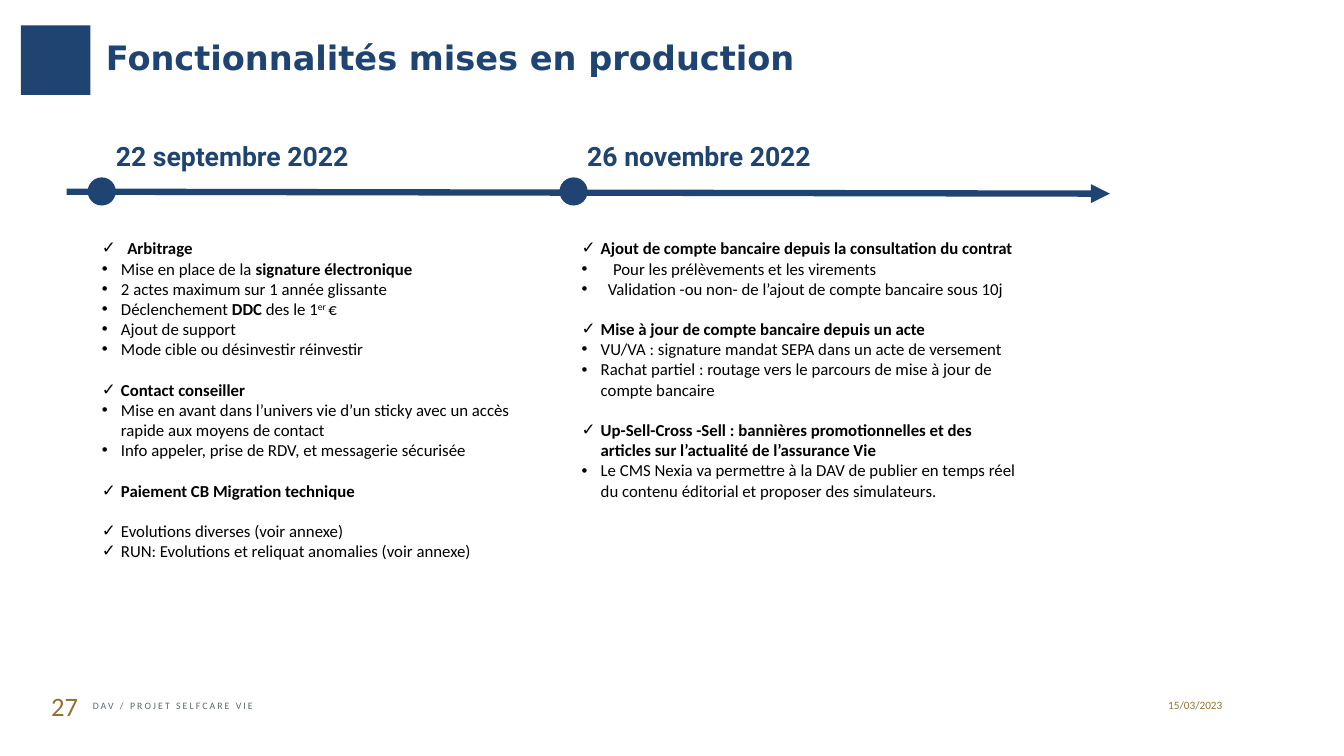
from dataclasses import dataclass

from lxml import etree
from pptx import Presentation
from pptx import util as u
from pptx.dml.color import RGBColor
from pptx.enum import shapes, text
from pptx.oxml import ns

Cm, Pt = u.Cm, u.Pt
Shape, Align, Anchor = shapes.MSO_SHAPE, text.PP_ALIGN, text.MSO_ANCHOR


@dataclass(frozen=True)
class Theme:
    navy: str = "1F4471"
    gold: str = "8F7332"
    slate: str = "5B6971"
    black: str = "000000"
    title_font: str = "DejaVu Sans"
    date_font: str = "Roboto"
    body_font: str = "Calibri"
    title_size: int = 24
    date_size: int = 19
    body_size: int = 12
    small_size: int = 8
    footer_size: int = 7
    block_gap: float = 14.5


THEME = Theme()
CHECK, DOT = "✓", "•"
INDENT = 0.48


@dataclass(frozen=True)
class Item:
    bullet: str
    content: str
    new_block: bool = False
    indent: float = INDENT


MILESTONES = [
    (2.21, 2.67, 2.11, "22 septembre 2022", [
        Item(CHECK, "**Arbitrage**", indent=0.64),
        Item(DOT, "Mise en place de la **signature électronique**"),
        Item(DOT, "2 actes maximum sur 1 année glissante"),
        Item(DOT, "Déclenchement **DDC** des le 1^er ^€"),
        Item(DOT, "Ajout de support"),
        Item(DOT, "Mode cible ou désinvestir réinvestir"),
        Item(CHECK, "**Contact conseiller**", True),
        Item(DOT, "Mise en avant dans l’univers vie d’un sticky avec un accès "
                  "rapide aux moyens de contact"),
        Item(DOT, "Info appeler, prise de RDV, et messagerie sécurisée"),
        Item(CHECK, "**Paiement CB Migration technique**", True),
        Item(CHECK, "Evolutions diverses (voir annexe)", True),
        Item(CHECK, "RUN: Evolutions et reliquat anomalies (voir annexe)"),
    ]),
    (14.1, 14.55, 14.2, "26 novembre 2022", [
        Item(CHECK, "**Ajout de compte bancaire depuis la consultation du contrat**"),
        Item(DOT, "Pour les prélèvements et les virements", indent=0.79),
        Item(DOT, "Validation -ou non- de l’ajout de compte bancaire sous 10j",
             indent=0.66),
        Item(CHECK, "**Mise à jour de compte bancaire depuis un acte**", True),
        Item(DOT, "VU/VA : signature mandat SEPA dans un acte de versement"),
        Item(DOT, "Rachat partiel : routage vers le parcours de mise à jour de "
                  "compte bancaire"),
        Item(CHECK, "**Up-Sell-Cross -Sell : bannières promotionnelles et des "
                    "articles sur l’actualité de l’assurance Vie**", True),
        Item(DOT, "Le CMS Nexia va permettre à la DAV de publier en temps réel "
                  "du contenu éditorial et proposer des simulateurs."),
    ]),
]


def add_run(paragraph, content, font, size, color, bold=False, spacing=0, raised=False):
    run = paragraph.add_run()
    run.text = content
    run.font.name = font
    run.font.size = Pt(size)
    run.font.bold = bold
    run.font.color.rgb = RGBColor.from_string(color)
    properties = run.font._element
    if spacing:
        properties.set("spc", str(int(spacing * 100)))
    if raised:
        properties.set("baseline", "30000")


def add_frame(slide, left, top, width, height, inset=(0, 0), anchor=Anchor.TOP):
    frame = slide.shapes.add_textbox(Cm(left), Cm(top), Cm(width), Cm(height)).text_frame
    frame.word_wrap = True
    frame.vertical_anchor = anchor
    frame.margin_left = frame.margin_right = Cm(inset[0])
    frame.margin_top = frame.margin_bottom = Cm(inset[1])
    return frame


def add_text(slide, content, box, inset=(0, 0), anchor=Anchor.MIDDLE, align=Align.LEFT,
             **run_format):
    paragraph = add_frame(slide, *box, inset=inset, anchor=anchor).paragraphs[0]
    paragraph.alignment = align
    add_run(paragraph, content, **run_format)


def add_solid(slide, preset, left, top, side):
    shape = slide.shapes.add_shape(preset, Cm(left), Cm(top), Cm(side), Cm(side))
    shape.shadow.inherit = False
    shape.fill.solid()
    shape.fill.fore_color.rgb = RGBColor.from_string(THEME.navy)
    shape.line.fill.background()


def add_arrow(slide, start, end):
    arrow = slide.shapes.add_connector(
        shapes.MSO_CONNECTOR.STRAIGHT, *map(Cm, start), *map(Cm, end))
    arrow.line.color.rgb = RGBColor.from_string(THEME.navy)
    arrow.line.width = Pt(4.5)
    etree.SubElement(arrow.line._get_or_add_ln(), ns.qn("a:tailEnd"), type="triangle")
    etree.SubElement(arrow._element.spPr, ns.qn("a:effectLst"))


def set_bullet(paragraph, bullet, indent):
    properties = paragraph._p.get_or_add_pPr()
    properties.set("marL", str(Cm(indent)))
    properties.set("indent", str(-Cm(indent)))
    etree.SubElement(properties, ns.qn("a:buFont"), typeface="Arial")
    etree.SubElement(properties, ns.qn("a:buChar"), char=bullet)


def add_list(slide, items, left):
    frame = add_frame(slide, left, 5.77, 11.94, 9.68, inset=(0.46, 0.23))
    for index, item in enumerate(items):
        paragraph = frame.add_paragraph() if index else frame.paragraphs[0]
        if item.new_block:
            paragraph.space_before = Pt(THEME.block_gap)
        set_bullet(paragraph, item.bullet, item.indent)
        for bold_index, segment in enumerate(item.content.split("**")):
            for raised_index, piece in enumerate(segment.split("^")):
                if piece:
                    add_run(paragraph, piece, THEME.body_font, THEME.body_size,
                            THEME.black, bold=bold_index % 2 == 1,
                            raised=raised_index % 2 == 1)


def add_milestone(slide, dot_left, date_left, list_left, date, items):
    add_solid(slide, Shape.OVAL, dot_left, 4.47, 0.71)
    add_text(slide, date, (date_left, 3.4, 8.18, 1.07), inset=(0.25, 0.13),
             anchor=Anchor.TOP, font=THEME.date_font, size=THEME.date_size,
             color=THEME.navy, bold=True)
    add_list(slide, items, list_left)


def add_footer(slide):
    add_text(slide, "27", (1.04, 17.25, 1.5, 1.02), inset=(0.25, 0.13),
             anchor=Anchor.TOP, font=THEME.body_font, size=THEME.date_size,
             color=THEME.gold)
    add_text(slide, "DAV / PROJET SELFCARE VIE", (2.34, 17.27, 26.19, 1.02),
             font=THEME.body_font, size=THEME.footer_size, color=THEME.slate,
             spacing=1.5)
    add_text(slide, "15/03/2023", (29.39, 17.55, 1.47, 0.43), align=Align.CENTER,
             font=THEME.body_font, size=THEME.small_size, color=THEME.gold)


def main():
    presentation = Presentation()
    presentation.slide_width, presentation.slide_height = Cm(33.87), Cm(19.05)
    slide = presentation.slides.add_slide(presentation.slide_layouts[6])
    add_solid(slide, Shape.RECTANGLE, 0.53, 0.64, 1.75)
    add_text(slide, "Fonctionnalités mises en production", (2.34, 0.56, 25.73, 1.75),
             inset=(0.33, 0.18), font=THEME.title_font, size=THEME.title_size,
             color=THEME.navy, bold=True)
    add_arrow(slide, (1.68, 4.83), (27.97, 4.88))
    for milestone in MILESTONES:
        add_milestone(slide, *milestone)
    add_footer(slide)
    presentation.save("out.pptx")


if __name__ == "__main__":
    main()
